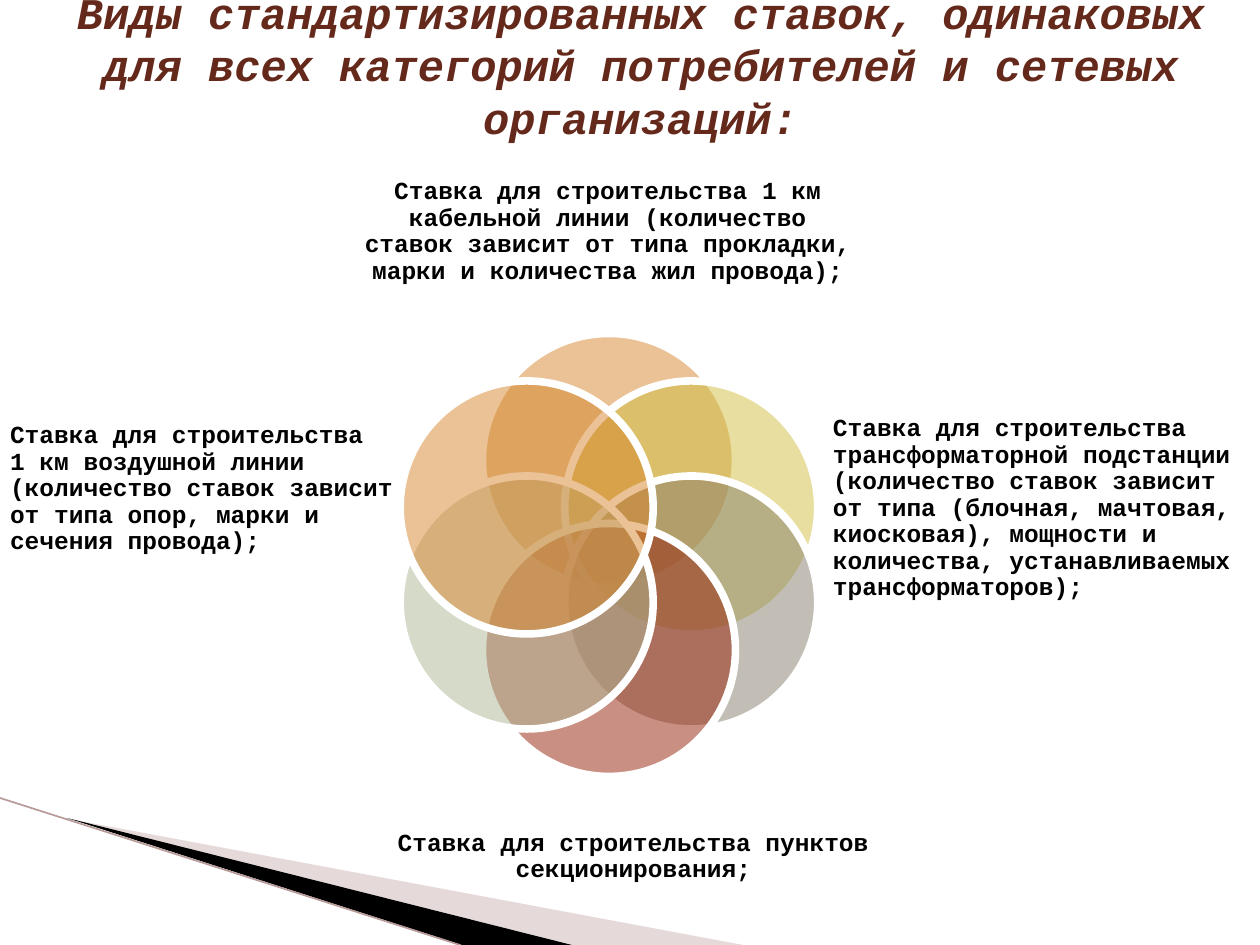
import math
from dataclasses import dataclass

from lxml import etree
from pptx import Presentation
from pptx.dml.color import RGBColor
from pptx.enum.shapes import MSO_CONNECTOR, MSO_SHAPE
from pptx.enum.text import MSO_ANCHOR, PP_ALIGN
from pptx.oxml.ns import qn
from pptx.util import Pt

ELLIPSE = MSO_SHAPE.OVAL
STRAIGHT = MSO_CONNECTOR.STRAIGHT
MIDDLE = MSO_ANCHOR.MIDDLE
LEFT, CENTER = PP_ALIGN.LEFT, PP_ALIGN.CENTER
EMU_PER_PX = 914400 / 126


@dataclass(frozen=True)
class Theme:
    font: str = "Courier New"
    title_size: float = 25
    label_size: float = 14
    title: str = "65291B"
    text: str = "000000"
    outline: str = "FFFFFF"
    pale_wedge: str = "BFA4A1"
    dark_wedge: str = "000000"
    edge: str = "B89A97"
    circles: tuple = ("D6862D", "D0BE40", "877F6C", "972109", "AEB795", "D6862D")


THEME = Theme()

# Content: text, box (left, top, width, height), alignment
SLIDE_SIZE = (1260, 945)
TITLE = ("Виды стандартизированных ставок, одинаковых для всех категорий "
         "потребителей и сетевых организаций:")
TITLE_BOX = (0, 0, 1256, 129)
LABELS = [
    ("Ставка для строительства 1 км кабельной линии (количество ставок зависит "
     "от типа прокладки, марки и количества жил провода);",
     (360, 145, 496, 173), CENTER),
    ("Ставка для строительства  1 км воздушной линии (количество ставок зависит "
     "от типа опор, марки и сечения провода);",
     (10, 337, 386, 304), LEFT),
    ("Ставка для строительства трансформаторной подстанции (количество ставок "
     "зависит от типа (блочная, мачтовая, киосковая), мощности и количества, "
     "устанавливаемых трансформаторов);",
     (833, 403, 427, 211), LEFT),
    ("Ставка для строительства пунктов секционирования;",
     (372, 770, 523, 173), CENTER),
]

# Corner decoration: points, colour, opacity in percent
WEDGES = [
    ([(69, 819), (743, 945), (573, 945)], THEME.pale_wedge, 40),
    ([(67, 818), (572, 945), (462, 945)], THEME.dark_wedge, 100),
]
EDGE_LINE = ((0, 798), (460, 945))

# Circle ring, clockwise from the top
RING_CENTER = (609, 555)
RING_RADIUS = 95
CIRCLE_SIZE = 253


def px(value):
    return round(value * EMU_PER_PX)


def px_all(values):
    return [px(value) for value in values]


def fill_shape(shape, color, opacity):
    shape.shadow.inherit = False
    shape.fill.solid()
    shape.fill.fore_color.rgb = RGBColor.from_string(color)
    if opacity < 100:
        color_element = shape.fill._xPr.find(qn("a:solidFill"))[0]
        etree.SubElement(color_element, qn("a:alpha"), val=str(opacity * 1000))


def add_text(slide, text, box, size, color, alignment, italic=False):
    shape = slide.shapes.add_textbox(*px_all(box))
    frame = shape.text_frame
    frame.word_wrap = True
    frame.vertical_anchor = MIDDLE
    frame.margin_left = frame.margin_right = 0
    frame.margin_top = frame.margin_bottom = 0
    paragraph = frame.paragraphs[0]
    paragraph.alignment = alignment
    run = paragraph.add_run()
    run.text = text
    run.font.name = THEME.font
    run.font.size = Pt(size)
    run.font.bold = True
    run.font.italic = italic
    run.font.color.rgb = RGBColor.from_string(color)
    return frame


def add_corner(slide):
    for points, color, opacity in WEDGES:
        builder = slide.shapes.build_freeform(*points[0], scale=EMU_PER_PX)
        builder.add_line_segments(points[1:], close=True)
        wedge = builder.convert_to_shape()
        fill_shape(wedge, color, opacity)
        wedge.line.fill.background()
    start, end = EDGE_LINE
    edge = slide.shapes.add_connector(STRAIGHT, *px_all(start + end))
    edge.line.color.rgb = RGBColor.from_string(THEME.edge)
    edge.line.width = Pt(0.95)
    etree.SubElement(edge._element.spPr, qn("a:effectLst"))


def add_ring(slide):
    step = 2 * math.pi / len(THEME.circles)
    for index, color in enumerate(THEME.circles):
        left = RING_CENTER[0] + RING_RADIUS * math.sin(index * step) - CIRCLE_SIZE / 2
        top = RING_CENTER[1] - RING_RADIUS * math.cos(index * step) - CIRCLE_SIZE / 2
        circle = slide.shapes.add_shape(
            ELLIPSE, *px_all((left, top, CIRCLE_SIZE, CIRCLE_SIZE)))
        fill_shape(circle, color, 50)
        circle.line.color.rgb = RGBColor.from_string(THEME.outline)
        circle.line.width = Pt(4.33)


def main():
    presentation = Presentation()
    presentation.slide_width, presentation.slide_height = px_all(SLIDE_SIZE)
    slide = presentation.slides.add_slide(presentation.slide_layouts[6])

    add_corner(slide)
    add_ring(slide)

    # Labels around the ring
    for text, box, alignment in LABELS:
        frame = add_text(slide, text, box, THEME.label_size, THEME.text, alignment)
        frame.paragraphs[0].line_spacing = 0.9

    # Title, shifted right by its indent
    frame = add_text(slide, TITLE, TITLE_BOX, THEME.title_size, THEME.title,
                     CENTER, italic=True)
    frame.margin_left = px(37)
    frame.margin_right = px(12)

    presentation.save("out.pptx")


if __name__ == "__main__":
    main()
